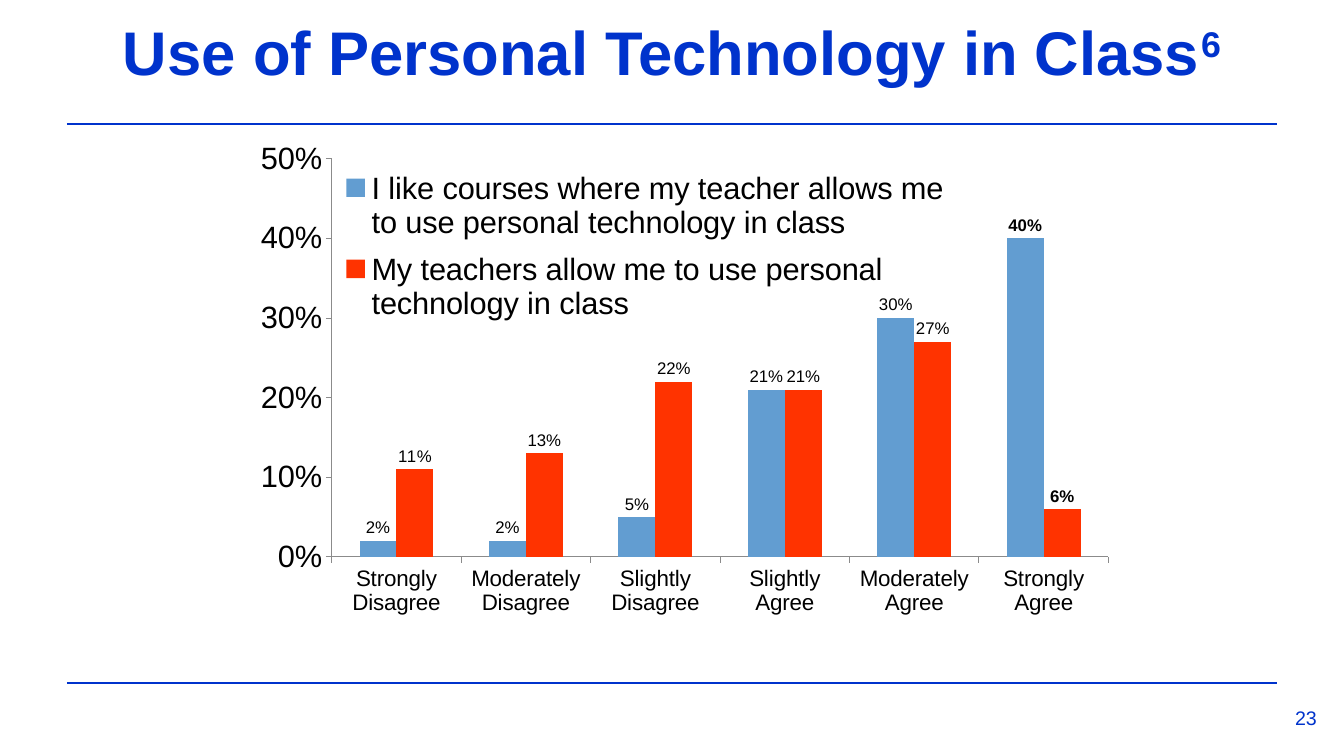
from lxml.etree import SubElement
from pptx import Presentation
from pptx.chart.data import CategoryChartData
from pptx.dml.color import RGBColor
from pptx.enum.chart import XL_CHART_TYPE as ChartType
from pptx.enum.chart import XL_LABEL_POSITION as LabelPosition
from pptx.enum.chart import XL_LEGEND_POSITION as LegendPosition
from pptx.enum.chart import XL_TICK_MARK as TickMark
from pptx.enum.shapes import MSO_CONNECTOR as Connector
from pptx.enum.text import MSO_ANCHOR as Anchor
from pptx.enum.text import MSO_AUTO_SIZE as AutoSize
from pptx.enum.text import PP_ALIGN as Align
from pptx.oxml.ns import qn
from pptx.util import Emu, Pt

SLIDE_WIDTH, SLIDE_HEIGHT = 1344, 756
EMU_PER_PX = 12192000 / SLIDE_WIDTH
BLUE = RGBColor(0x00, 0x33, 0xCC)
BAR_BLUE = RGBColor(0x62, 0x9D, 0xD1)
BAR_RED = RGBColor(0xFF, 0x33, 0x00)
BLACK = RGBColor(0x00, 0x00, 0x00)
AXIS_GRAY = RGBColor(0x8B, 0x8B, 0x8B)

CATEGORIES = ["Strongly Disagree", "Moderately Disagree", "Slightly Disagree",
              "Slightly Agree", "Moderately Agree", "Strongly Agree"]
SERIES = [
    ("I like courses where my teacher allows me to use personal technology in class",
     (0.02, 0.02, 0.05, 0.21, 0.3, 0.4), BAR_BLUE),
    ("My teachers allow me to use personal technology in class",
     (0.11, 0.13, 0.22, 0.21, 0.27, 0.06), BAR_RED),
]


def px(length):
    """Turn whole pixels into EMU."""
    return Emu(round(length * EMU_PER_PX))


def style_font(font, size, color=BLACK, name="Arial", bold=False):
    """Set the look of a font."""
    font.size, font.name, font.bold = Pt(size), name, bold
    font.color.rgb = color


def add_run(paragraph, text, size, bold=False):
    """Add a blue run and return it."""
    run = paragraph.add_run()
    run.text = text
    style_font(run.font, size, BLUE, bold=bold)
    return run


def add_title(slide):
    """Fill the title placeholder, with its raised note number."""
    title = slide.shapes.title
    title.left, title.top, title.width, title.height = px(67), px(17), px(1210), px(76)
    frame = title.text_frame
    frame.auto_size, frame.vertical_anchor = AutoSize.NONE, Anchor.BOTTOM
    paragraph = frame.paragraphs[0]
    paragraph.alignment = Align.CENTER
    add_run(paragraph, "Use of Personal Technology in Class", 44, bold=True)
    note = add_run(paragraph, "6", 44, bold=True)
    note.font._element.set("baseline", "30000")


def add_rule(slide, top):
    """Draw a horizontal rule between the margins."""
    rule = slide.shapes.add_connector(Connector.STRAIGHT, px(67), px(top), px(1277), px(top))
    rule.line.color.rgb, rule.line.width = BLUE, Pt(1.5)
    SubElement(rule._element.spPr, qn("a:effectLst"))


def add_page_number(slide, number):
    """Write the page number in the bottom corner."""
    box = slide.shapes.add_textbox(px(1268), px(701), px(76), px(42))
    box.text_frame.word_wrap = True
    paragraph = box.text_frame.paragraphs[0]
    paragraph.alignment = Align.CENTER
    add_run(paragraph, number, 14)


def place(element, x, y, width, height, inner=False):
    """Give a plot area or legend a manual layout in fractions of the chart."""
    layout = element.find(qn("c:layout"))
    if layout is None:
        layout = element.makeelement(qn("c:layout"))
        before = element.find(qn("c:legendPos"))
        if before is None:
            element.insert(0, layout)
        else:
            before.addnext(layout)
    manual = SubElement(layout, qn("c:manualLayout"))
    settings = [("layoutTarget", "inner")] if inner else []
    settings += [("xMode", "edge"), ("yMode", "edge"),
                 ("x", x), ("y", y), ("w", width), ("h", height)]
    for tag, value in settings:
        SubElement(manual, qn(f"c:{tag}")).set("val", str(value))


def style_axis(axis, size):
    """Set the line, ticks and font of an axis."""
    axis.has_major_gridlines = False
    axis.major_tick_mark, axis.minor_tick_mark = TickMark.OUTSIDE, TickMark.NONE
    axis.format.line.color.rgb, axis.format.line.width = AXIS_GRAY, Pt(0.75)
    style_font(axis.tick_labels.font, size)


def style_series(series, color):
    """Colour a series and label its bars, the last label in bold."""
    series.format.fill.solid()
    series.format.fill.fore_color.rgb = color
    series.invert_if_negative = False
    labels = series.data_labels
    labels.show_value, labels.position = True, LabelPosition.OUTSIDE_END
    labels.number_format, labels.number_format_is_linked = "0%", False
    style_font(labels.font, 12)
    last_label = series.points[len(CATEGORIES) - 1].data_label
    style_font(last_label.font, 12, bold=True)
    last_label.position = LabelPosition.OUTSIDE_END


def add_survey_chart(slide):
    """Add the clustered columns with the legend over the plot."""
    data = CategoryChartData(number_format="0%")
    data.categories = CATEGORIES
    for name, values, _ in SERIES:
        data.add_series(name, values)
    chart = slide.shapes.add_chart(
        ChartType.COLUMN_CLUSTERED, px(222), px(142), px(900), px(520), data).chart
    style_font(chart.font, 10, name="Cabin")
    chart.has_title = False
    style_axis(chart.category_axis, 16)
    value_axis = chart.value_axis
    style_axis(value_axis, 22)
    value_axis.minimum_scale, value_axis.maximum_scale, value_axis.major_unit = 0, 0.5, 0.1
    value_axis.tick_labels.number_format = "0%"
    value_axis.tick_labels.number_format_is_linked = False
    plot = chart.plots[0]
    plot.gap_width, plot.overlap, plot.vary_by_categories = 150, 0, False
    for series, (_, _, color) in zip(plot.series, SERIES):
        style_series(series, color)
    chart.has_legend = True
    legend = chart.legend
    legend.position, legend.include_in_layout = LegendPosition.RIGHT, False
    style_font(legend.font, 22)
    place(legend._element, 0.12, 0.03, 0.7, 0.34)
    legend._element.find(qn("c:overlay")).set("val", "1")
    place(chart._chartSpace.chart.plotArea, 0.122, 0.031, 0.863, 0.767, inner=True)


def main():
    """Build the slide and save it."""
    presentation = Presentation()
    presentation.slide_width, presentation.slide_height = px(SLIDE_WIDTH), px(SLIDE_HEIGHT)
    slide = presentation.slides.add_slide(presentation.slide_layouts[5])
    for top in (683, 124):
        add_rule(slide, top)
    add_page_number(slide, "23")
    add_title(slide)
    add_survey_chart(slide)
    presentation.save("out.pptx")


if __name__ == "__main__":
    main()
